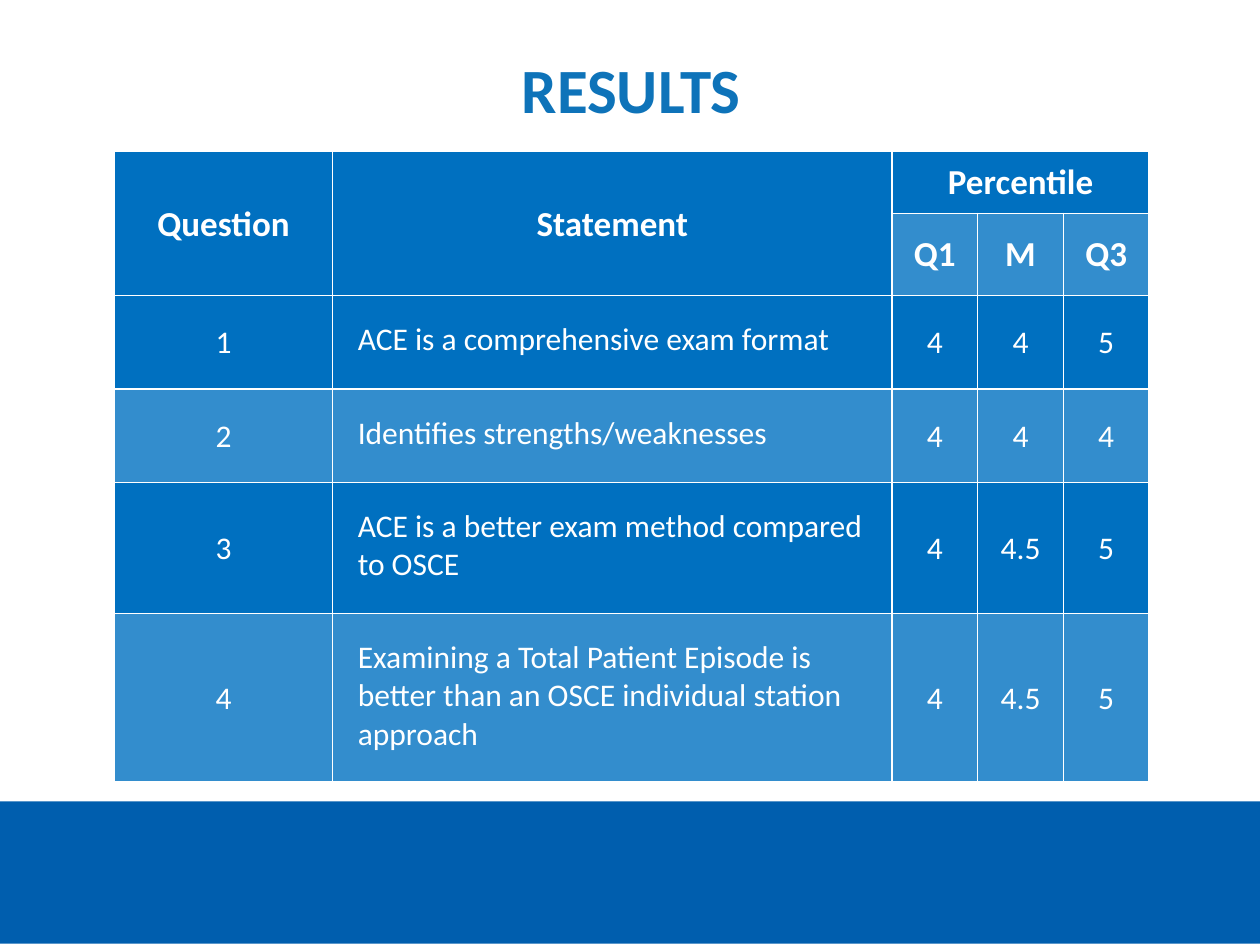
import pptx
import pptx.dml.color
import pptx.enum.shapes
import pptx.enum.text
import pptx.oxml.ns
import pptx.util
from lxml import etree

Inches = pptx.util.Inches
ALIGN = pptx.enum.text.PP_ALIGN
ANCHOR = pptx.enum.text.MSO_ANCHOR

FONT = "Calibri"
WHITE = "FFFFFF"
TITLE_BLUE = "0E73B9"
FOOTER_BLUE = "005EAE"
DARK_BLUE = "0070C0"
LIGHT_BLUE = "338DCD"

COLUMN_WIDTHS = [1.73, 4.44, 0.68, 0.68, 0.68]
ROW_HEIGHTS = [0.48, 0.63, 0.71, 0.71, 1, 1.29]
PLAIN_MARGINS = (0.01, 0.01, 0.01, 0)
GROUP_MARGINS = (0.01, 0.08, 0.01, 0.08)
QUARTILE_MARGINS = (0.01, 0.16, 0.01, 0.16)
STATEMENT_MARGINS = (0.2, 0.2, 0.2, 0.24)

QUESTIONS = [
    ("1", "ACE is a comprehensive exam format", "4", "4", "5"),
    ("2", "Identifies strengths/weaknesses", "4", "4", "4"),
    ("3", "ACE is a better exam method compared to OSCE", "4", "4.5", "5"),
    ("4", "Examining a Total Patient Episode is better than an OSCE "
          "individual station approach", "4", "4.5", "5"),
]


def color(hex_value):
    return pptx.dml.color.RGBColor.from_string(hex_value)


def set_margins(target, margins):
    (target.margin_left, target.margin_top,
     target.margin_right, target.margin_bottom) = map(Inches, margins)


def write_text(frame, text, size, hex_value, bold, align=ALIGN.CENTER):
    para = frame.paragraphs[0]
    para.alignment = align
    span = para.add_run()
    span.text = text
    span.font.name = FONT
    span.font.size = pptx.util.Pt(size)
    span.font.bold = bold
    span.font.color.rgb = color(hex_value)


def add_title(slide, text):
    box = slide.shapes.add_textbox(Inches(0.91), Inches(0.39), Inches(8.2), Inches(0.61))
    frame = box.text_frame
    frame.word_wrap = True
    frame.vertical_anchor = ANCHOR.BOTTOM
    set_margins(frame, (0, 0, 0, 0))
    write_text(frame, text, 36, TITLE_BLUE, True)


def add_footer_band(slide):
    band = slide.shapes.add_shape(
        pptx.enum.shapes.MSO_SHAPE.RECTANGLE,
        Inches(0), Inches(6.36), Inches(10), Inches(1.13))
    band.shadow.inherit = False
    band.fill.solid()
    band.fill.fore_color.rgb = color(FOOTER_BLUE)
    band.line.fill.background()


def style_cell(cell, fill):
    properties = cell._tc.get_or_add_tcPr()
    for side in ("lnL", "lnR", "lnT", "lnB"):
        border = etree.SubElement(properties, pptx.oxml.ns.qn("a:" + side), w="12700")
        solid = etree.SubElement(border, pptx.oxml.ns.qn("a:solidFill"))
        etree.SubElement(solid, pptx.oxml.ns.qn("a:srgbClr"), val=WHITE)
    cell.fill.solid()
    cell.fill.fore_color.rgb = color(fill)


def write_cell(cell, text, margins, size=18, bold=False, align=ALIGN.CENTER):
    cell.vertical_anchor = ANCHOR.MIDDLE
    set_margins(cell, margins)
    write_text(cell.text_frame, text, size, WHITE, bold, align)


def write_headers(table):
    table.cell(0, 0).merge(table.cell(1, 0))
    table.cell(0, 1).merge(table.cell(1, 1))
    table.cell(0, 2).merge(table.cell(0, 4))
    headers = [
        (0, 0, "Question", PLAIN_MARGINS),
        (0, 1, "Statement", PLAIN_MARGINS),
        (0, 2, "Percentile", GROUP_MARGINS),
        (1, 2, "Q1", QUARTILE_MARGINS),
        (1, 3, "M", QUARTILE_MARGINS),
        (1, 4, "Q3", QUARTILE_MARGINS),
    ]
    for row, column, text, margins in headers:
        write_cell(table.cell(row, column), text, margins, 20, True)


def write_questions(table):
    for row, question in enumerate(QUESTIONS, start=2):
        for column, text in enumerate(question):
            if column == 1:
                write_cell(table.cell(row, column), text, STATEMENT_MARGINS, align=ALIGN.LEFT)
            else:
                write_cell(table.cell(row, column), text, PLAIN_MARGINS)


def add_results_table(slide):
    table = slide.shapes.add_table(
        len(ROW_HEIGHTS), len(COLUMN_WIDTHS),
        Inches(0.91), Inches(1.2), Inches(8.2), Inches(4.97)).table
    table.first_row = False
    table.horz_banding = False
    for column, width in zip(table.columns, COLUMN_WIDTHS):
        column.width = Inches(width)
    for row_index, (row, height) in enumerate(zip(table.rows, ROW_HEIGHTS)):
        row.height = Inches(height)
        for column_index, cell in enumerate(row.cells):
            spanned_header = row_index == 1 and column_index < 2
            light = row_index % 2 == 1 and not spanned_header
            style_cell(cell, LIGHT_BLUE if light else DARK_BLUE)
    write_headers(table)
    write_questions(table)


def main():
    deck = pptx.Presentation()
    deck.slide_width = Inches(10)
    deck.slide_height = Inches(7.5)
    slide = deck.slides.add_slide(deck.slide_layouts[6])
    slide.background.fill.solid()
    slide.background.fill.fore_color.rgb = color(WHITE)
    add_footer_band(slide)
    add_title(slide, "RESULTS")
    add_results_table(slide)
    deck.save("out.pptx")


if __name__ == "__main__":
    main()
